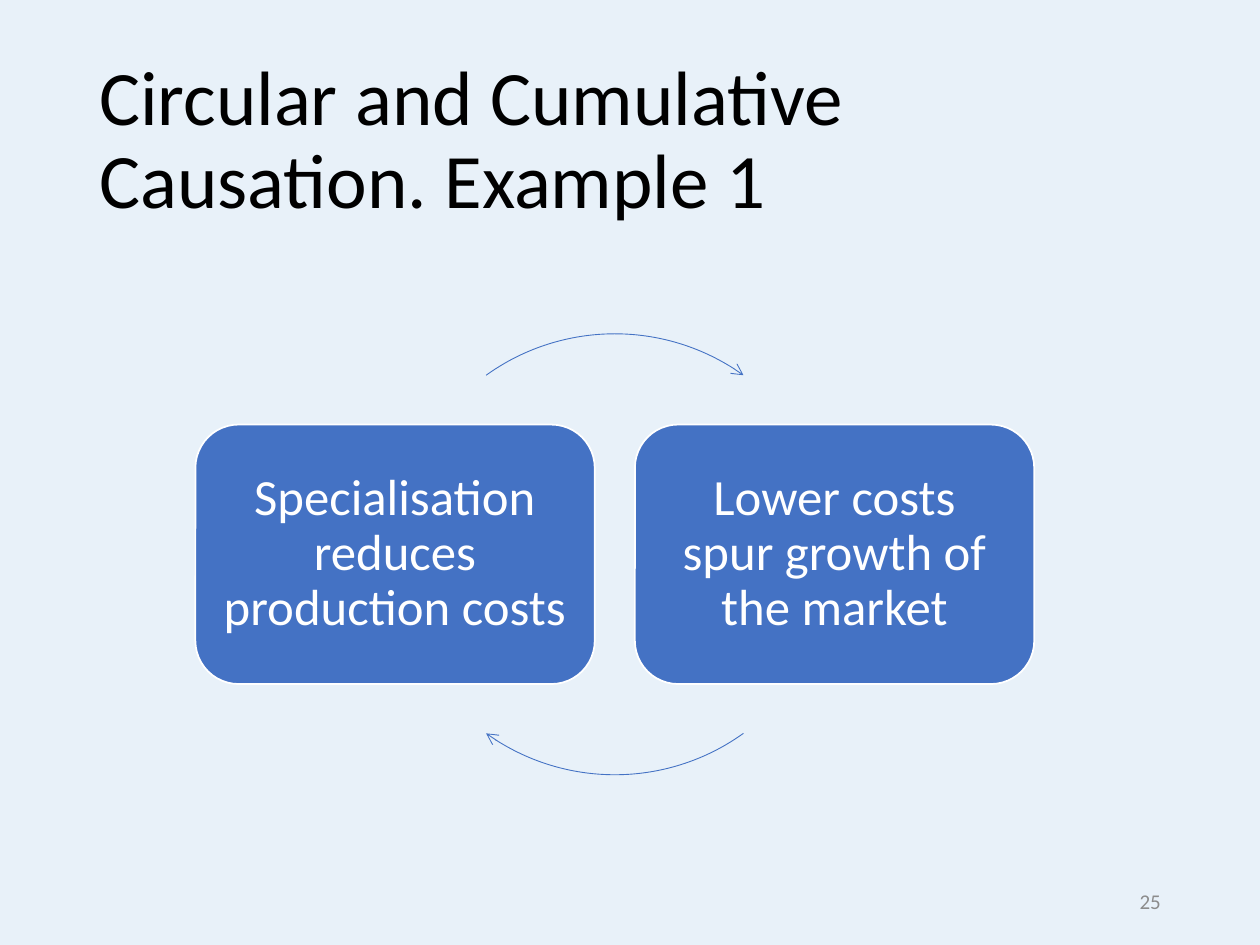
from lxml import etree
from pptx import Presentation
from pptx.dml.color import RGBColor
from pptx.enum.shapes import MSO_SHAPE
from pptx.enum.text import MSO_ANCHOR, PP_ALIGN
from pptx.oxml.ns import qn
from pptx.util import Cm, Pt

ROUNDED = MSO_SHAPE.ROUNDED_RECTANGLE
ARC = MSO_SHAPE.ARC
MIDDLE = MSO_ANCHOR.MIDDLE
LEFT, CENTER, RIGHT = PP_ALIGN.LEFT, PP_ALIGN.CENTER, PP_ALIGN.RIGHT

FONT = "Calibri"
COLORS = {
    "background": "E8F1F9",
    "title": "000000",
    "number": "8C8C8C",
    "accent": "4472C4",
    "white": "FFFFFF",
}
CAUSES = [
    "Specialisation reduces production costs",
    "Lower costs spur growth of the market",
]
CAUSE_LEFT, CAUSE_STEP = 3.94, 8.86
ARC_UNITS_PER_DEGREE = 0.6
ARC_HALF_ANGLE = 35.7


def color(name):
    """Return the named colour."""
    return RGBColor.from_string(COLORS[name])


def set_attributes(target, values):
    """Set each attribute of the target from a dict."""
    for name, value in values.items():
        setattr(target, name, value)


def write_text(shape, text, size, color_name, alignment, line_spacing=1.0):
    """Write one formatted paragraph into a shape."""
    frame = shape.text_frame
    set_attributes(frame, {"word_wrap": True, "vertical_anchor": MIDDLE})
    paragraph = frame.paragraphs[0]
    set_attributes(paragraph, {"alignment": alignment, "line_spacing": line_spacing})
    run = paragraph.add_run()
    run.text = text
    set_attributes(run.font, {"name": FONT, "size": Pt(size)})
    run.font.color.rgb = color(color_name)


def add_label(slide, box, *text_format):
    """Add a text box with one paragraph."""
    shape = slide.shapes.add_textbox(*map(Cm, box))
    write_text(shape, *text_format)


def add_cause(slide, left, text):
    """Add a rounded box that states one cause."""
    shape = slide.shapes.add_shape(ROUNDED, *map(Cm, (left, 8.56, 8.05, 5.23)))
    shape.shadow.inherit = False
    shape.fill.solid()
    shape.fill.fore_color.rgb = color("accent")
    shape.line.color.rgb = color("white")
    shape.line.width = Pt(1)
    sides = ("left", "top", "right", "bottom")
    set_attributes(shape.text_frame, {f"margin_{side}": Cm(0.3) for side in sides})
    write_text(shape, text, 29, "white", CENTER, 0.9)


def add_cycle_arrow(slide, middle_angle):
    """Add a clockwise arc arrow centred on an angle of the cycle."""
    shape = slide.shapes.add_shape(ARC, *map(Cm, (7.95, 6.73, 8.89, 8.89)))
    shape.shadow.inherit = False
    shape.fill.background()
    shape.line.color.rgb = color("accent")
    shape.line.width = Pt(0.5)
    for index, offset in enumerate((-ARC_HALF_ANGLE, ARC_HALF_ANGLE)):
        shape.adjustments[index] = (middle_angle + offset) * ARC_UNITS_PER_DEGREE
    line = shape.line._get_or_add_ln()
    etree.SubElement(line, qn("a:tailEnd"), type="arrow")


def main():
    """Build and save the slide."""
    presentation = Presentation()
    set_attributes(presentation, {"slide_width": Cm(25.4), "slide_height": Cm(19.05)})
    slide = presentation.slides.add_slide(presentation.slide_layouts[6])
    slide.background.fill.solid()
    slide.background.fill.fore_color.rgb = color("background")

    add_label(slide, (1.75, 1.02, 21.9, 3.68),
              "Circular and Cumulative Causation. Example 1", 44, "title", LEFT, 0.9)
    add_label(slide, (17.93, 17.65, 5.72, 1.02), "25", 12, "number", RIGHT)
    for index, text in enumerate(CAUSES):
        add_cause(slide, CAUSE_LEFT + index * CAUSE_STEP, text)
    for middle_angle in (270, 90):
        add_cycle_arrow(slide, middle_angle)

    presentation.save("out.pptx")


if __name__ == "__main__":
    main()
